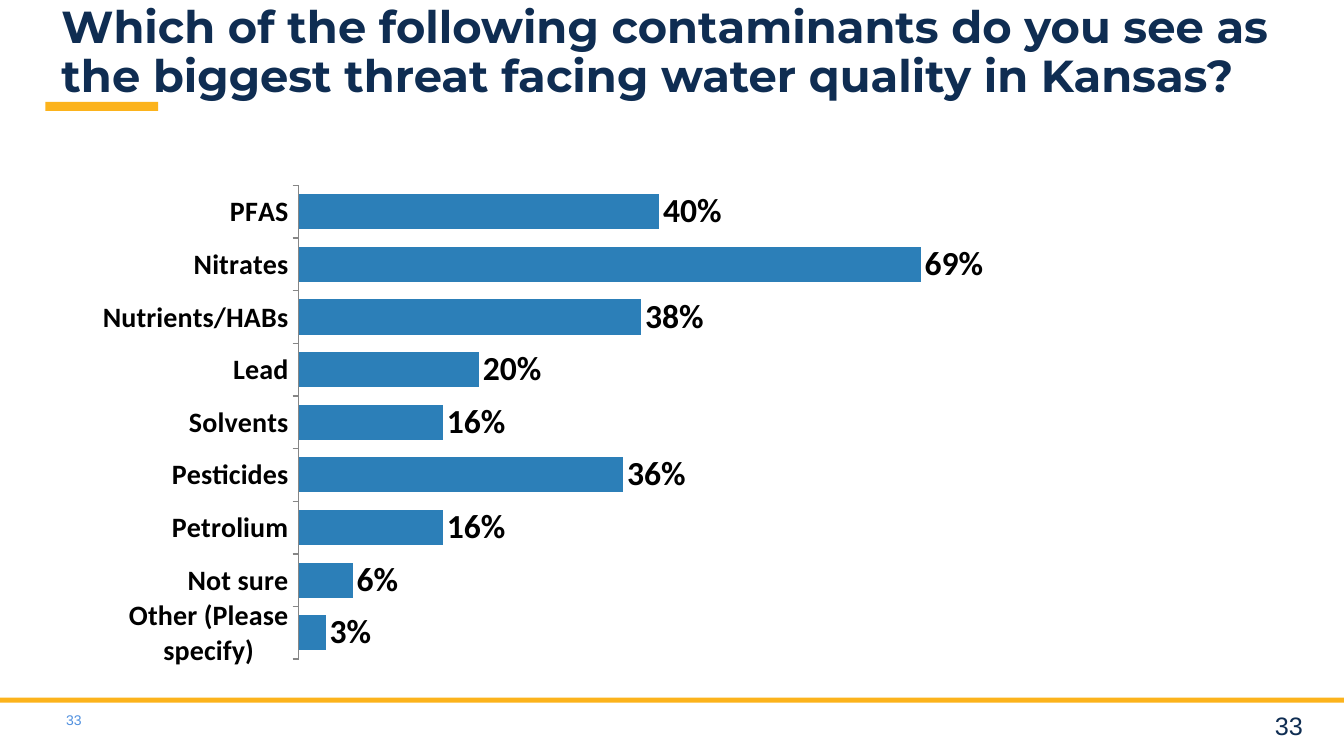
from lxml import etree
from pptx import Presentation
from pptx.chart.data import CategoryChartData
from pptx.dml.color import RGBColor
from pptx.enum.chart import XL_CHART_TYPE, XL_LABEL_POSITION, XL_TICK_LABEL_POSITION, XL_TICK_MARK
from pptx.enum.shapes import MSO_SHAPE
from pptx.enum.text import MSO_ANCHOR, PP_ALIGN
from pptx.oxml.ns import qn
from pptx.util import Inches, Pt

BAR_CLUSTERED = XL_CHART_TYPE.BAR_CLUSTERED
OUTSIDE_END = XL_LABEL_POSITION.OUTSIDE_END
LABELS_LOW = XL_TICK_LABEL_POSITION.LOW
TICK_OUTSIDE, TICK_NONE = XL_TICK_MARK.OUTSIDE, XL_TICK_MARK.NONE
RECTANGLE = MSO_SHAPE.RECTANGLE
TOP = MSO_ANCHOR.TOP
LEFT, RIGHT = PP_ALIGN.LEFT, PP_ALIGN.RIGHT

NAVY = RGBColor(0x0F, 0x2D, 0x52)
GOLD = RGBColor(0xFC, 0xB3, 0x1C)
BLUE = RGBColor(0x2C, 0x7F, 0xB8)
PALE_BLUE = RGBColor(0x50, 0x90, 0xDF)
GRAY = RGBColor(0x86, 0x86, 0x86)
BLACK = RGBColor(0, 0, 0)

CONTAMINANTS = {
    "PFAS": 0.40,
    "Nitrates": 0.69,
    "Nutrients/HABs": 0.38,
    "Lead": 0.20,
    "Solvents": 0.16,
    "Pesticides": 0.36,
    "Petrolium": 0.16,
    "Not sure": 0.06,
    "Other (Please specify)": 0.03,
}


def format_font(font, size, color, name="Arial", bold=False):
    font.name, font.size, font.bold = name, Pt(size), bold
    font.color.rgb = color


def write_text(frame, text, align=LEFT, spacing=None, **font_format):
    paragraph = frame.paragraphs[0]
    paragraph.alignment = align
    paragraph.line_spacing = spacing
    run = paragraph.add_run()
    run.text = text
    format_font(run.font, **font_format)


class SlideBuilder:
    """Places elements by percent of the slide's width and height."""

    def __init__(self):
        self.presentation = Presentation()
        self.presentation.slide_width = Inches(13.33)
        self.presentation.slide_height = Inches(7.5)
        self.slide = self.presentation.slides.add_slide(self.presentation.slide_layouts[6])

    def area(self, left, top, width, height):
        column = self.presentation.slide_width / 100
        row = self.presentation.slide_height / 100
        return [round(n) for n in (left * column, top * row, width * column, height * row)]

    def bar(self, *place):
        shape = self.slide.shapes.add_shape(RECTANGLE, *self.area(*place))
        shape.shadow.inherit = False
        shape.fill.solid()
        shape.fill.fore_color.rgb = GOLD
        shape.line.fill.background()

    def text(self, text, *place, inset=True, **text_format):
        frame = self.slide.shapes.add_textbox(*self.area(*place)).text_frame
        frame.word_wrap = True
        frame.vertical_anchor = TOP
        if not inset:
            frame.margin_left = frame.margin_right = 0
            frame.margin_top = frame.margin_bottom = 0
        write_text(frame, text, **text_format)

    def bar_chart(self, values, *place, plot):
        data = CategoryChartData(number_format="0%")
        data.categories = list(values)
        data.add_series("Series 1", list(values.values()))
        chart = self.slide.shapes.add_chart(BAR_CLUSTERED, *self.area(*place), data).chart
        chart.has_title = chart.has_legend = False
        format_font(chart.font, 18, NAVY)

        # Axes
        categories, scale = chart.category_axis, chart.value_axis
        categories.reverse_order = True
        categories.has_major_gridlines = False
        categories.major_tick_mark = TICK_OUTSIDE
        categories.minor_tick_mark = TICK_NONE
        categories.tick_label_position = LABELS_LOW
        categories.format.line.color.rgb = GRAY
        categories.format.line.width = Pt(1)
        format_font(categories.tick_labels.font, 20, BLACK, "Calibri", True)
        scale.minimum_scale, scale.maximum_scale = 0, 1
        scale.has_major_gridlines = scale.visible = False

        # Bars and their labels
        bars = chart.plots[0]
        bars.gap_width = 50
        bars.vary_by_categories = False
        series = bars.series[0]
        series.format.fill.solid()
        series.format.fill.fore_color.rgb = BLUE
        labels = series.data_labels
        labels.show_value = True
        labels.number_format, labels.number_format_is_linked = "0%", False
        labels.position = OUTSIDE_END
        format_font(labels.font, 24, BLACK, "Calibri", True)
        self.fix_plot(chart, plot)

    def fix_plot(self, chart, plot):
        plot_area = chart.plots[0]._element.getparent()
        for old_layout in plot_area.findall(qn("c:layout")):
            plot_area.remove(old_layout)
        layout = etree.Element(qn("c:layout"))
        manual = etree.SubElement(layout, qn("c:manualLayout"))
        settings = [("layoutTarget", "inner"), ("xMode", "edge"), ("yMode", "edge")]
        for tag, value in settings + list(zip("xywh", plot)):
            etree.SubElement(manual, qn(f"c:{tag}")).set("val", str(value))
        plot_area.insert(0, layout)


def main():
    builder = SlideBuilder()

    # Gold rules
    builder.bar(0, 92.27, 100, 0.67)
    builder.bar(3.38, 13.47, 8.4, 1.2)

    # Title
    builder.text(
        "Which of the following contaminants do you see as "
        "the biggest threat facing water quality in Kansas?",
        3.83, 0, 95.4, 11.33,
        spacing=0.9, size=32, color=NAVY, name="Montserrat", bold=True)

    # Slide numbers
    builder.text("33", 90.62, 93.33, 7.05, 4.67, align=RIGHT, size=18, color=NAVY)
    builder.text("33", 1.65, 94.13, 4.43, 2.8, inset=False, align=RIGHT, size=10, color=PALE_BLUE)

    # Survey results
    builder.bar_chart(CONTAMINANTS, 6.08, 23.2, 84.92, 66.67, plot=(0.19, 0.02, 0.79, 0.94))

    builder.presentation.save("out.pptx")


if __name__ == "__main__":
    main()
